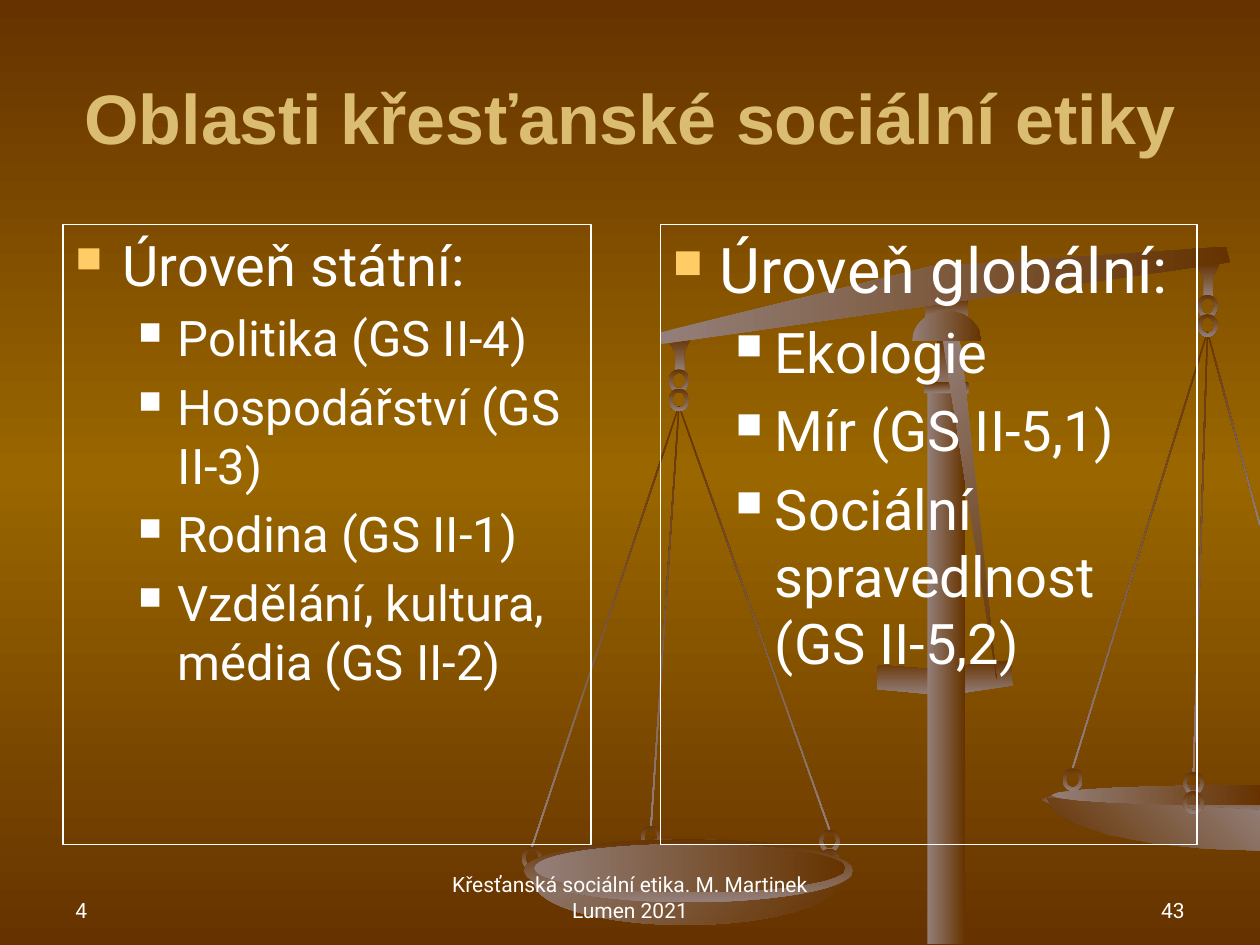
from copy import deepcopy
from dataclasses import dataclass
from math import atan2, cos, degrees, hypot, radians, sin

from lxml import etree
from pptx import Presentation
from pptx.dml.color import RGBColor
from pptx.enum.shapes import MSO_SHAPE as Preset
from pptx.enum.text import MSO_ANCHOR as Anchor, PP_ALIGN as Align
from pptx.oxml.ns import qn
from pptx.util import Pt

BROWN = RGBColor(0x66, 0x33, 0x00)
OCHRE = RGBColor(0x99, 0x66, 0x00)
TAUPE = RGBColor(0x93, 0x7F, 0x79)
SAND = RGBColor(0xDB, 0xBD, 0x71)
AMBER = RGBColor(0xFF, 0xCC, 0x66)
WHITE = RGBColor(0xFF, 0xFF, 0xFF)

WIDTH, HEIGHT, MARGIN = 720, 540, 36
Points = list[tuple[float, float]]


@dataclass(frozen=True)
class Shade:
    start: RGBColor
    end: RGBColor
    angle: int  # clockwise degrees


DOWN = Shade(BROWN, TAUPE, 90)
ACROSS = Shade(TAUPE, BROWN, 0)
DIAGONAL = Shade(TAUPE, BROWN, 45)
BOWL = Shade(BROWN, TAUPE, 315)


@dataclass(frozen=True)
class Arm:
    x: float
    hook_top: float
    cord_ends: Points
    ring_counts: tuple[int, ...]


@dataclass(frozen=True)
class Panel:
    left: float
    width: float
    heading: str
    items: list[str]
    heading_size: int
    item_size: int


ARMS = [
    Arm(388, 193, [(304, 484), (372, 472), (474, 474)], (1, 1, 2)),
    Arm(690, 150.5, [(613, 439), (682, 441), (WIDTH, 300)], (1, 2, 0)),
]

PANELS = [
    Panel(MARGIN, 301.7, "Úroveň státní:",
          ["Politika (GS II-4)", "Hospodářství (GS II-3)", "Rodina (GS II-1)",
           "Vzdělání, kultura, média (GS II-2)"], 32, 28),
    Panel(377.3, 306.7, "Úroveň globální:",
          ["Ekologie", "Mír (GS II-5,1)",
           "Sociální spravedlnost (GS II-5,2)"], 36, 32),
]


def apply_shade(fill, shade: Shade) -> None:
    fill.gradient()
    fill.gradient_angle = (360 - shade.angle) % 360
    for stop, color, position in zip(fill.gradient_stops,
                                     (shade.start, shade.end), (0, 1)):
        stop.color.rgb = color
        stop.position = position


def paint_background(page) -> None:
    fill = page.background.fill
    apply_shade(fill, Shade(BROWN, BROWN, 90))
    stops = page.element.find(".//" + qn("a:gsLst"))
    stops.insert(1, deepcopy(stops[0]))
    fill.gradient_stops[1].color.rgb = OCHRE
    fill.gradient_stops[1].position = 0.5


def finish(shape, shade: Shade) -> None:
    shape.shadow.inherit = False
    shape.line.fill.background()
    apply_shade(shape.fill, shade)


def draw_block(page, preset: Preset, left: float, top: float, width: float,
               height: float, shade: Shade = DOWN):
    shape = page.shapes.add_shape(preset, Pt(left), Pt(top), Pt(width),
                                  Pt(height))
    finish(shape, shade)
    return shape


def draw_outline(page, points: Points, shade: Shade = DOWN) -> None:
    start, *rest = [(Pt(x), Pt(y)) for x, y in points]
    builder = page.shapes.build_freeform(*start)
    builder.add_line_segments(rest, close=True)
    finish(builder.convert_to_shape(), shade)


def arc(x: float, y: float, across: float, down: float,
        first: int, last: int) -> Points:
    return [(x + across * cos(radians(turn)), y + down * sin(radians(turn)))
            for turn in range(first, last + 1, 15)]


def draw_rings(page, x: float, top: float, count: int) -> None:
    for index in range(count):
        shape = draw_block(page, Preset.DONUT, x - 5.75, top + 11 * index,
                           11.5, 13)
        shape.adjustments[0] = 0.17


def draw_arm(page, arm: Arm) -> None:
    x, top = arm.x, arm.hook_top
    low = top + 39
    for (end_x, end_y), count in zip(arm.cord_ends, arm.ring_counts):
        length = hypot(end_x - x, end_y - low)
        cord = draw_block(page, Preset.RECTANGLE, (x + end_x) / 2 - 0.36,
                          (low + end_y - length) / 2, 0.72, length)
        cord.rotation = degrees(atan2(x - end_x, end_y - low)) % 360
        draw_rings(page, end_x, end_y, count)
    draw_outline(page, [(x + 7, top), (x - 6, top + 1.5), (x - 2, top + 9),
                        (x - 2, top + 19), (x + 3, top + 19),
                        (x + 3, top + 8)])
    draw_rings(page, x, top + 18, 2)


def draw_scales(page) -> None:
    draw_block(page, Preset.RECTANGLE, 528.5, 170.6, 24.5, 13)
    draw_block(page, Preset.OVAL, 537, 148.3, 5.8, 5.8)
    # Foot plate
    draw_outline(page, [(501.8, 380), (532, 382.3), (577.4, 377.3),
                        (579, 391.7), (540, 397.4), (501, 393.8)])
    # Right pan, cut by the slide edge: rim, bowl, inside
    draw_outline(page, arc(WIDTH, 457, 124.6, 8, 90, 270))
    draw_outline(page, [(WIDTH, 463)] + arc(WIDTH, 456, 121.7, 30, 90, 180),
                 BOWL)
    draw_outline(page, arc(WIDTH, 454.4, 119.5, 5.8, 90, 270), ACROSS)
    # Hanging parts and beam
    for arm in ARMS:
        draw_arm(page, arm)
    draw_outline(page, [(700.6, 141), (702.7, 149.8), (378, 196.6),
                        (377.3, 190), (530.6, 152.6)], ACROSS)
    # Left pan
    draw_block(page, Preset.OVAL, 305.3, 479.5, 172.8, 49, DIAGONAL)
    draw_block(page, Preset.OVAL, 299.5, 479.5, 187.9, 36)
    draw_block(page, Preset.OVAL, 305.3, 482.4, 177.8, 27.4, ACROSS)
    # Column, neck, collar, brace and cap
    draw_block(page, Preset.RECTANGLE, 529.9, 221.8, 21.6, 317.5, ACROSS)
    draw_block(page, Preset.RECTANGLE, 535.7, 193, 9.4, 30.2)
    draw_block(page, Preset.ROUNDED_RECTANGLE, 527.8, 218.2, 25.9, 6.5)
    draw_outline(page, [(569.5, 388), (538.6, 193), (547.2, 191),
                        (549.4, 199.4)], DIAGONAL)
    draw_outline(page, arc(541, 195, 19.8, 17.3, 180, 360), ACROSS)


def add_span(para, text: str, size: float, font: str = "Roboto",
             color: RGBColor = WHITE, bold: bool = False) -> None:
    span = para.add_run()
    span.text = text
    span.font.size, span.font.name, span.font.bold = Pt(size), font, bold
    span.font.color.rgb = color


def add_box(page, left: float, top: float, width: float, height: float,
            anchor: Anchor, align: Align = Align.LEFT):
    box = page.shapes.add_textbox(Pt(left), Pt(top), Pt(width), Pt(height))
    box.text_frame.word_wrap = True
    box.text_frame.vertical_anchor = anchor
    box.text_frame.paragraphs[0].alignment = align
    return box


def add_bullet(para, color: RGBColor, margin: float, hang: float) -> None:
    props = para._p.get_or_add_pPr()
    props.set("marL", str(Pt(margin)))
    props.set("indent", str(-Pt(hang)))
    tint = etree.SubElement(props, qn("a:buClr"))
    etree.SubElement(tint, qn("a:srgbClr"), val=str(color))
    etree.SubElement(props, qn("a:buSzPct"), val="65000")
    etree.SubElement(props, qn("a:buChar"), char="■")


def draw_panel(page, panel: Panel) -> None:
    box = add_box(page, panel.left, 128.2, panel.width, 354.2, Anchor.TOP)
    box.line.color.rgb, box.line.width = WHITE, Pt(0.75)
    frame = box.text_frame
    for index, text in enumerate([panel.heading, *panel.items]):
        para = frame.add_paragraph() if index else frame.paragraphs[0]
        size = panel.item_size if index else panel.heading_size
        para.level = 1 if index else 0
        para.space_before = Pt(size * 0.2)
        add_bullet(para, *((WHITE, 58.5, 22.5) if index else (AMBER, 27, 27)))
        add_span(para, text, size)


def main() -> None:
    deck = Presentation()
    deck.slide_width, deck.slide_height = Pt(WIDTH), Pt(HEIGHT)
    page = deck.slides.add_slide(deck.slide_layouts[6])
    paint_background(page)
    draw_scales(page)

    # Footer
    for left, width, align, text in (
            (MARGIN, 168, Align.LEFT, "4"),
            (246, 228, Align.CENTER,
             "Křesťanská sociální etika. M. Martinek Lumen 2021"),
            (516, 168, Align.RIGHT, "43")):
        box = add_box(page, left, 494.6, width, 36, Anchor.BOTTOM, align)
        add_span(box.text_frame.paragraphs[0], text, 12)

    # Title and panels
    title = add_box(page, MARGIN, 21.6, WIDTH - 2 * MARGIN, 90,
                    Anchor.MIDDLE, Align.CENTER)
    add_span(title.text_frame.paragraphs[0],
             "Oblasti křesťanské sociální etiky", 40, "Arial", SAND, True)
    for panel in PANELS:
        draw_panel(page, panel)
    deck.save("out.pptx")


if __name__ == "__main__":
    main()
